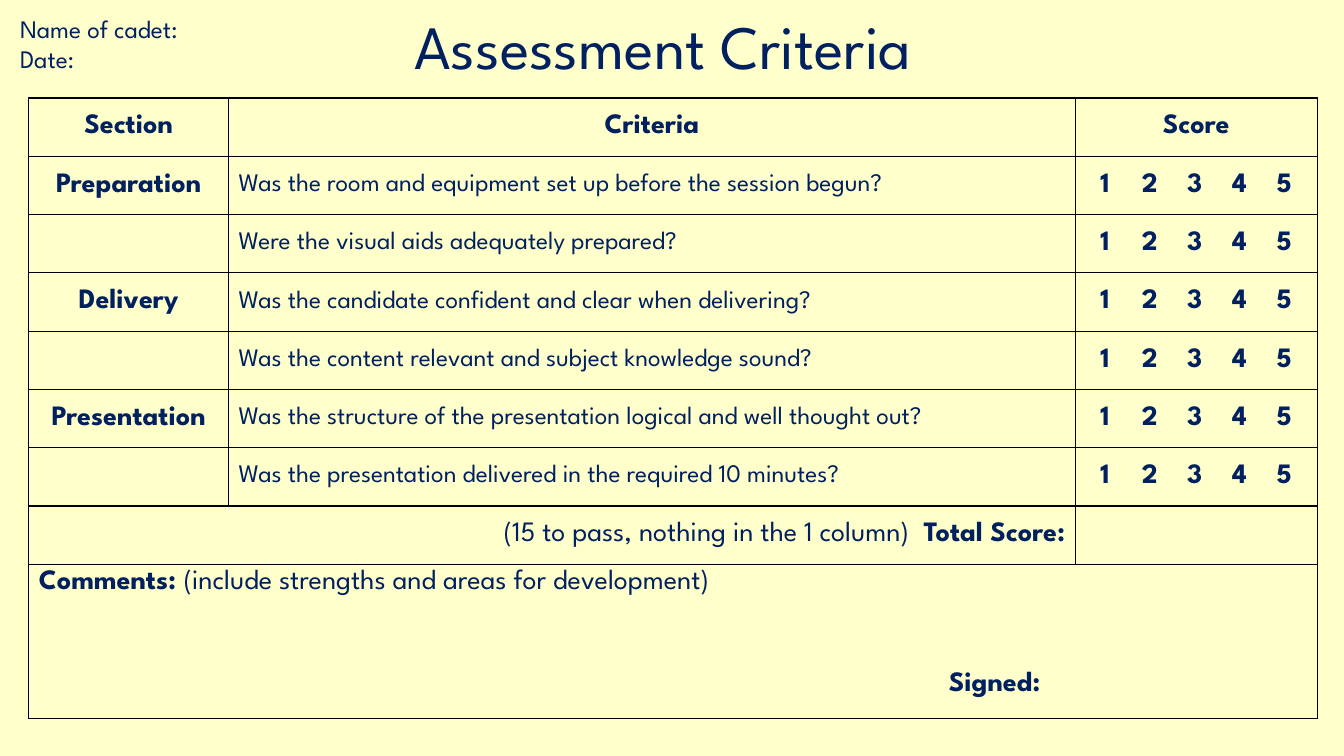
from lxml import etree
from pptx import Presentation
from pptx.dml import color
from pptx.enum import text as text_enum
from pptx.oxml import ns
from pptx.util import Pt

COLORS = {"background": "FFFFCC", "ink": "002060", "border": "000000"}
FONT = "League Spartan"
LEFT, CENTER, RIGHT = (text_enum.PP_ALIGN.LEFT, text_enum.PP_ALIGN.CENTER, text_enum.PP_ALIGN.RIGHT)
MIDDLE, TOP = text_enum.MSO_ANCHOR.MIDDLE, text_enum.MSO_ANCHOR.TOP

TITLE = "Assessment Criteria"
CADET_FIELDS = ["Name of cadet:", "Date:"]
HEADINGS = ["Section", "Criteria", "Score"]
SCORES = ["1", "2", "3", "4", "5"]
SECTIONS = [
    ("Preparation", [
        "Was the room and equipment set up before the session begun?",
        "Were the visual aids adequately prepared?",
    ]),
    ("Delivery", [
        "Was the candidate confident and clear when delivering?",
        "Was the content relevant and subject knowledge sound?",
    ]),
    ("Presentation", [
        "Was the structure of the presentation logical and well thought out?",
        "Was the presentation delivered in the required 10 minutes?",
    ]),
]
TOTAL = [("(15 to pass, nothing in the 1 column)  ", False), ("Total Score:", True)]
COMMENTS = [("Comments: ", True), ("(include strengths and areas for development)", False)]
SIGNED = "Signed:"

TABLE_LEFT, TABLE_TOP = 20.5, 70
COLUMN_WIDTHS = [142.8, 604.8, 172.8]
ROW_HEIGHT, COMMENTS_HEIGHT = 41.65, 99.4
FIRST_SCORE, SCORE_STEP = 14, 32
SIGNED_GAP, SIGNED_INDENT = 55, 650


def write(frame, text, size=20, bold=False, align=LEFT, spacing=None, before=0, indent=0, tabs=()):
    paragraph = frame.paragraphs[0]
    if paragraph.runs:
        paragraph = frame.add_paragraph()
    paragraph.alignment = align
    paragraph.space_before = Pt(before)
    if spacing:
        paragraph.line_spacing = spacing
    properties = paragraph._p.get_or_add_pPr()
    if indent:
        properties.set("marL", str(Pt(indent)))
    if tabs:
        tab_list = etree.SubElement(properties, ns.qn("a:tabLst"))
        for position in tabs:
            etree.SubElement(tab_list, ns.qn("a:tab"), pos=str(Pt(position)), algn="ctr")
    for words, is_bold in [(text, bold)] if isinstance(text, str) else text:
        run = paragraph.add_run()
        run.text = words
        run.font.name = FONT
        run.font.size = Pt(size)
        run.font.bold = is_bold
        run.font.color.rgb = color.RGBColor.from_string(COLORS["ink"])


def add_text_box(slide, left, top, width, height, anchor=TOP):
    frame = slide.shapes.add_textbox(Pt(left), Pt(top), Pt(width), Pt(height)).text_frame
    frame.word_wrap = True
    frame.vertical_anchor = anchor
    return frame


def style_cell(cell):
    cell.fill.background()
    cell.vertical_anchor = MIDDLE
    properties = cell._tc.get_or_add_tcPr()
    for index, side in enumerate(["lnL", "lnR", "lnT", "lnB"]):
        line = etree.Element(ns.qn("a:" + side), w=str(Pt(1)))
        fill = etree.SubElement(line, ns.qn("a:solidFill"))
        etree.SubElement(fill, ns.qn("a:srgbClr"), val=COLORS["border"])
        properties.insert(index, line)


def add_assessment_table(slide):
    question_count = sum(len(questions) for _, questions in SECTIONS)
    heights = [ROW_HEIGHT] * (question_count + 2) + [COMMENTS_HEIGHT]
    table = slide.shapes.add_table(
        len(heights), len(COLUMN_WIDTHS), Pt(TABLE_LEFT), Pt(TABLE_TOP),
        Pt(sum(COLUMN_WIDTHS)), Pt(sum(heights))).table
    table.first_row = table.horz_banding = False
    for column, width in zip(table.columns, COLUMN_WIDTHS):
        column.width = Pt(width)
    for row, height in zip(table.rows, heights):
        row.height = Pt(height)
    for cell in table.iter_cells():
        style_cell(cell)

    for column, heading in enumerate(HEADINGS):
        write(table.cell(0, column).text_frame, heading, bold=True, align=CENTER)

    score_tabs = [FIRST_SCORE + SCORE_STEP * index for index in range(len(SCORES))]
    score_text = "".join("\t" + score for score in SCORES)
    row = 1
    for section, questions in SECTIONS:
        write(table.cell(row, 0).text_frame, section, bold=True, align=CENTER)
        for question in questions:
            write(table.cell(row, 1).text_frame, question, size=18)
            write(table.cell(row, 2).text_frame, score_text, bold=True, tabs=score_tabs)
            row += 1

    total = table.cell(row, 0)
    total.merge(table.cell(row, 1))
    write(total.text_frame, TOTAL, align=RIGHT)

    comments = table.cell(row + 1, 0)
    comments.merge(table.cell(row + 1, 2))
    comments.vertical_anchor = TOP
    write(comments.text_frame, COMMENTS)
    write(comments.text_frame, SIGNED, bold=True, before=SIGNED_GAP, indent=SIGNED_INDENT)


def main():
    presentation = Presentation()
    presentation.slide_width, presentation.slide_height = Pt(960), Pt(540)
    slide = presentation.slides.add_slide(presentation.slide_layouts[6])
    slide.background.fill.solid()
    slide.background.fill.fore_color.rgb = color.RGBColor.from_string(COLORS["background"])

    title = add_text_box(slide, 238.3, 5.8, 470.9, 59, anchor=MIDDLE)
    write(title, TITLE, size=44, align=CENTER, spacing=0.9)
    add_assessment_table(slide)
    cadet = add_text_box(slide, 7.2, 5.8, 253.4, 51)
    for field in CADET_FIELDS:
        write(cadet, field, size=18)

    presentation.save("out.pptx")


if __name__ == "__main__":
    main()
